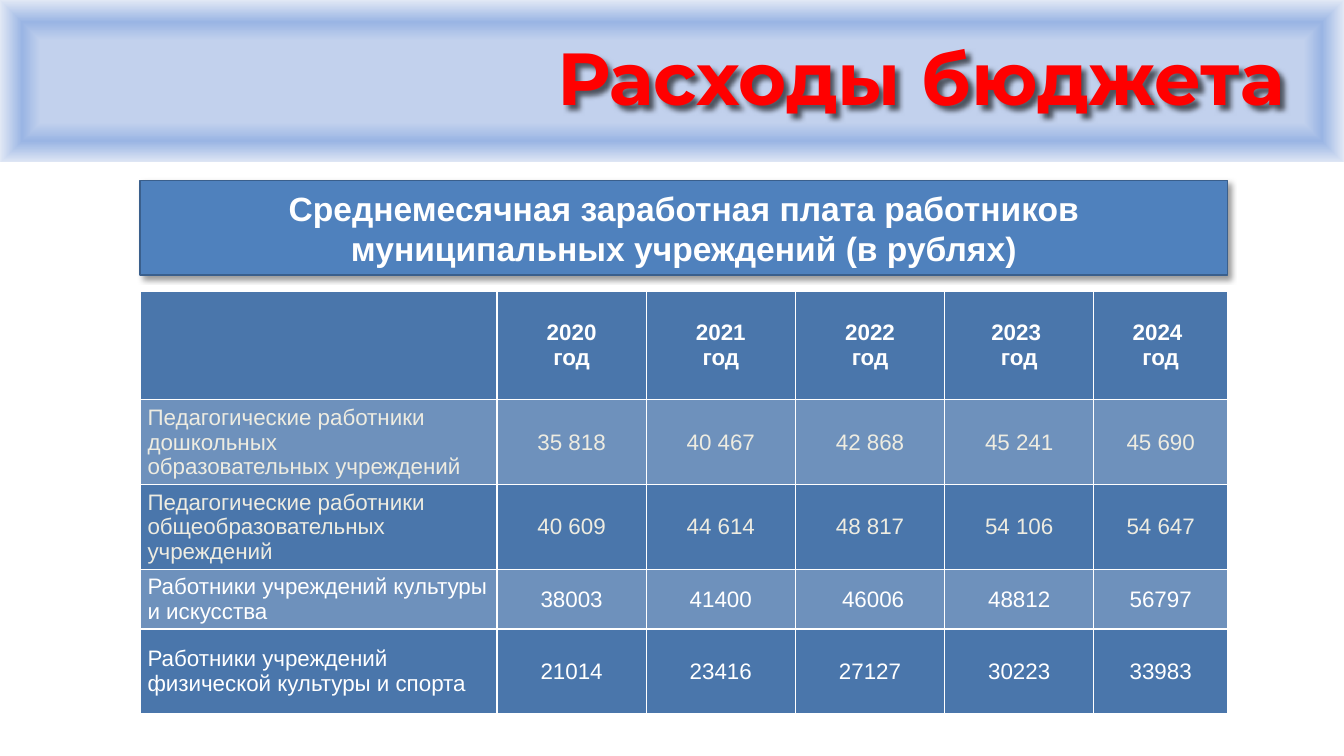
from pptx import Presentation
from pptx.dml.color import RGBColor
from pptx.enum.shapes import MSO_CONNECTOR, MSO_SHAPE
from pptx.enum.text import MSO_ANCHOR, PP_ALIGN
from pptx.oxml import parse_xml
from pptx.oxml.ns import nsdecls
from pptx.util import Pt

COLORS = {
    "white": "FFFFFF", "cream": "EEECE1", "red": "FF0000", "black": "000000",
    "banner": "4F81BD", "banner_line": "3A5F8C",
    "dark_row": "4A76AB", "light_row": "6E91BC",
    "header_mid": "C2D1ED", "header_ring": "9AB5E4", "header_edge": "E1E8F5",
}
WIDTH, HEIGHT = 960, 540
LEFT, BODY_WIDTH = 100, 776.9
HEADER_HEIGHT = 116.6

YEARS = ["2020\nгод", "2021\nгод", "2022\nгод", "2023 \nгод", "2024 \nгод"]
SALARIES = [
    ["Педагогические работники дошкольных\nобразовательных учреждений",
     "35 818", "40 467", "42 868", "45 241", "45 690"],
    ["Педагогические работники общеобразовательных\nучреждений",
     "40 609", "44 614", "48 817", "54 106", "54 647"],
    ["Работники учреждений культуры и искусства",
     "38003", "41400", " 46006", "48812", "56797"],
    ["Работники учреждений физической культуры и спорта",
     "21014", "23416", "27127", "30223", "33983"],
]


def rgb(name):
    return RGBColor.from_string(COLORS[name])


def xml(tag, body="", attrs=""):
    return parse_xml(f"<a:{tag} {nsdecls('a')} {attrs}>{body}</a:{tag}>")


def solid(name):
    return f'<a:solidFill><a:srgbClr val="{COLORS[name]}"/></a:solidFill>'


def write(tf, text, size=16, font="Arial", color="white", bold=False,
          align=PP_ALIGN.CENTER, spacing=None):
    """Put each line of text in a paragraph of its own."""
    for i, line in enumerate(text.split("\n")):
        p = tf.paragraphs[0] if i == 0 else tf.add_paragraph()
        p.alignment = align
        if spacing:
            p.line_spacing = spacing
        r = p.add_run()
        r.text = line
        r.font.size, r.font.name, r.font.bold = Pt(size), font, bold
        r.font.color.rgb = rgb(color)


class SlideBuilder:
    def __init__(self, slide):
        self.s = slide

    def rect(self, x, y, w, h):
        sp = self.s.shapes.add_shape(MSO_SHAPE.RECTANGLE, Pt(x), Pt(y), Pt(w), Pt(h))
        sp.shadow.inherit = False
        sp.line.fill.background()
        return sp

    def shadow(self, sp, blur, dist, alpha):
        sp.shadow.inherit = False
        effects = sp.element.spPr.find(xml("effectLst").tag)
        effects.append(xml(
            "outerShdw",
            f'<a:srgbClr val="{COLORS["black"]}"><a:alpha val="{alpha * 1000}"/></a:srgbClr>',
            f'blurRad="{Pt(blur)}" dist="{Pt(dist)}" dir="2700000" algn="tl" rotWithShape="0"'))

    def header(self, stops):
        """Full-width band with a gradient running from its centre to its edges."""
        sp = self.rect(0, 0, WIDTH, HEADER_HEIGHT)
        sp.fill.background()
        gs = "".join(f'<a:gs pos="{pos * 1000}"><a:srgbClr val="{COLORS[name]}"/></a:gs>'
                     for pos, name in stops)
        grad = xml("gradFill", f'<a:gsLst>{gs}</a:gsLst><a:path path="shape">'
                   '<a:fillToRect l="50000" t="50000" r="50000" b="50000"/></a:path>',
                   'rotWithShape="1"')
        spPr = sp.element.spPr
        spPr.replace(spPr.find(xml("noFill").tag), grad)

    def line(self, x1, y1, x2, y2, color, width):
        cn = self.s.shapes.add_connector(MSO_CONNECTOR.STRAIGHT, Pt(x1), Pt(y1), Pt(x2), Pt(y2))
        cn.line.color.rgb, cn.line.width = rgb(color), Pt(width)
        cn.element.spPr.append(xml("effectLst"))

    def banner(self, x, y, w, h, text):
        sp = self.rect(x, y, w, h)
        sp.fill.solid()
        sp.fill.fore_color.rgb = rgb("banner")
        sp.line.color.rgb, sp.line.width = rgb("banner_line"), Pt(1)
        self.shadow(sp, blur=4, dist=3, alpha=40)
        tf = sp.text_frame
        tf.word_wrap, tf.vertical_anchor = True, MSO_ANCHOR.MIDDLE
        write(tf, text, size=24, bold=True)

    def cell(self, cell, text, fill, **style):
        cell.vertical_anchor = MSO_ANCHOR.MIDDLE
        cell.margin_left = cell.margin_right = Pt(5.4)
        cell.margin_top = cell.margin_bottom = Pt(2)
        tcPr = cell.fill and cell._tc.get_or_add_tcPr()
        for side in ("lnL", "lnR", "lnT", "lnB"):
            tcPr.append(xml(side, solid("white"), f'w="{Pt(1)}"'))
        cell.fill.solid()
        cell.fill.fore_color.rgb = rgb(fill)
        if text:
            write(cell.text_frame, text, **style)

    def table(self, x, y, col_widths, row_heights, rows):
        frame = self.s.shapes.add_table(len(rows), len(col_widths), Pt(x), Pt(y),
                                        Pt(sum(col_widths)), Pt(sum(row_heights)))
        tbl = frame.table
        tbl.first_row = tbl.horz_banding = False
        for col, w in zip(tbl.columns, col_widths):
            col.width = Pt(w)
        for row, h in zip(tbl.rows, row_heights):
            row.height = Pt(h)
        for i, values in enumerate(rows):
            for j, text in enumerate(values):
                self.cell(tbl.cell(i, j), text, "light_row" if i % 2 else "dark_row",
                          bold=i == 0, color="cream" if i in (1, 2) else "white",
                          align=PP_ALIGN.CENTER if j else PP_ALIGN.LEFT)

    def title(self, x, y, w, h, text):
        sp = self.s.shapes.add_textbox(Pt(x), Pt(y), Pt(w), Pt(h))
        self.shadow(sp, blur=4, dist=4, alpha=60)
        tf = sp.text_frame
        tf.word_wrap, tf.vertical_anchor = True, MSO_ANCHOR.BOTTOM
        write(tf, text, size=52.6, font="Montserrat", color="red", bold=True,
              align=PP_ALIGN.RIGHT, spacing=0.9)
        rPr = tf.paragraphs[0].runs[0].font._element
        rPr.insert(0, xml("ln", solid("white"), f'w="{Pt(1.5)}"'))


def main():
    prs = Presentation()
    prs.slide_width, prs.slide_height = Pt(WIDTH), Pt(HEIGHT)
    b = SlideBuilder(prs.slides.add_slide(prs.slide_layouts[6]))
    b.header([(50, "header_mid"), (73, "header_ring"), (100, "header_edge")])
    b.line(0, HEADER_HEIGHT, WIDTH, HEADER_HEIGHT, "white", 2)
    b.banner(LEFT, 128.9, BODY_WIDTH, 67.7,
             "Среднемесячная заработная плата работников муниципальных учреждений (в рублях)")
    b.table(LEFT, 208.1, [255] + [106.6] * 4 + [95.5], [77.5, 60.7, 60.7, 42.3, 60.7],
            [["", *YEARS], *SALARIES])
    b.title(190.8, 11.5, 733.7, 78.5, "Расходы бюджета")
    prs.save("out.pptx")


if __name__ == "__main__":
    main()
